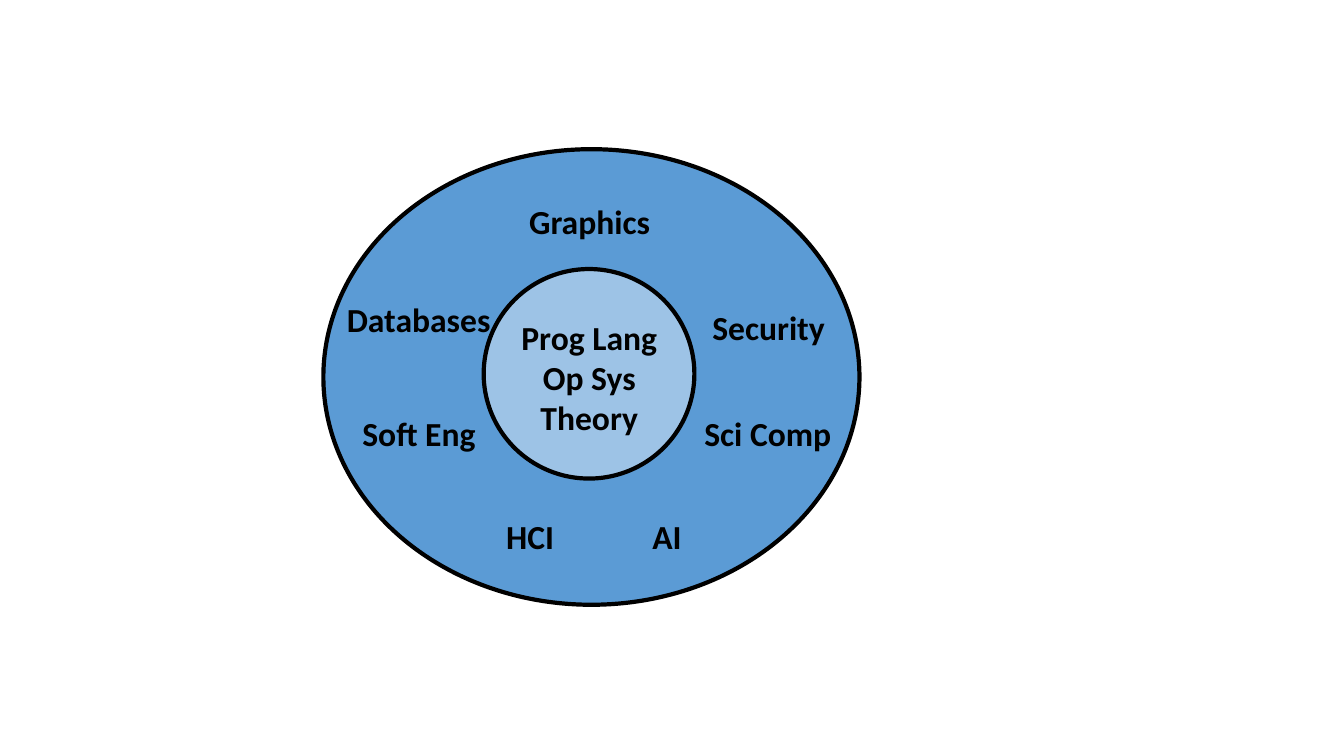
from pptx import Presentation
from pptx.dml.color import RGBColor
from pptx.enum.shapes import MSO_SHAPE as Shape
from pptx.enum.text import MSO_ANCHOR as Anchor, PP_ALIGN as Align
from pptx.util import Cm, Pt

COLORS = {"outer": "5B9BD5", "core": "9DC3E6", "ink": "000000"}
FIELDS = [
    ("Graphics", 14.86, 4.95, 7.26),
    ("Databases", 10.55, 7.42, 4.19),
    ("Security", 19.37, 7.62, 3.38),
    ("Soft Eng", 10.56, 10.29, 3.43),
    ("Sci Comp", 19.35, 10.29, 3.73),
    ("HCI", 13.36, 12.88, 2),
    ("AI", 16.81, 12.88, 2),
]
CORE_FIELDS = ["Prog Lang", "Op Sys", "Theory"]


def color(name):
    """Return the named colour of the diagram."""
    return RGBColor.from_string(COLORS[name])


def add_ellipse(slide, left, top, width, height, fill):
    """Draw an outlined ellipse, with lengths in centimetres."""
    shape = slide.shapes.add_shape(
        Shape.OVAL, Cm(left), Cm(top), Cm(width), Cm(height))
    shape.shadow.inherit = False
    shape.fill.solid()
    shape.fill.fore_color.rgb = color(fill)
    shape.line.color.rgb = color("ink")
    shape.line.width = Pt(3)


def write_text(paragraph, text, size=24, bold=True, font="Calibri",
               ink="ink", align=Align.CENTER):
    """Write formatted text into a paragraph."""
    paragraph.alignment = align
    run = paragraph.add_run()
    run.text = text
    run.font.name = font
    run.font.size = Pt(size)
    run.font.bold = bold
    run.font.color.rgb = color(ink)


def add_label(slide, lines, center, top, width, height=1.27):
    """Add a text box centred on a horizontal position."""
    box = slide.shapes.add_textbox(
        Cm(center - width / 2), Cm(top), Cm(width), Cm(height))
    frame = box.text_frame
    frame.word_wrap = True
    frame.vertical_anchor = Anchor.TOP
    for index, line in enumerate(lines):
        paragraph = frame.add_paragraph() if index else frame.paragraphs[0]
        write_text(paragraph, line)


def main():
    """Build the slide of computer science fields."""
    presentation = Presentation()
    presentation.slide_width = Cm(33.87)
    presentation.slide_height = Cm(19.05)
    slide = presentation.slides.add_slide(presentation.slide_layouts[6])
    add_ellipse(slide, 8.15, 3.76, 13.51, 11.48, "outer")
    add_ellipse(slide, 12.19, 6.78, 5.31, 5.28, "core")
    for name, center, top, width in FIELDS:
        add_label(slide, [name], center, top, width)
    add_label(slide, CORE_FIELDS, 14.85, 7.85, 5.31, height=3.33)
    presentation.save("out.pptx")


if __name__ == "__main__":
    main()
